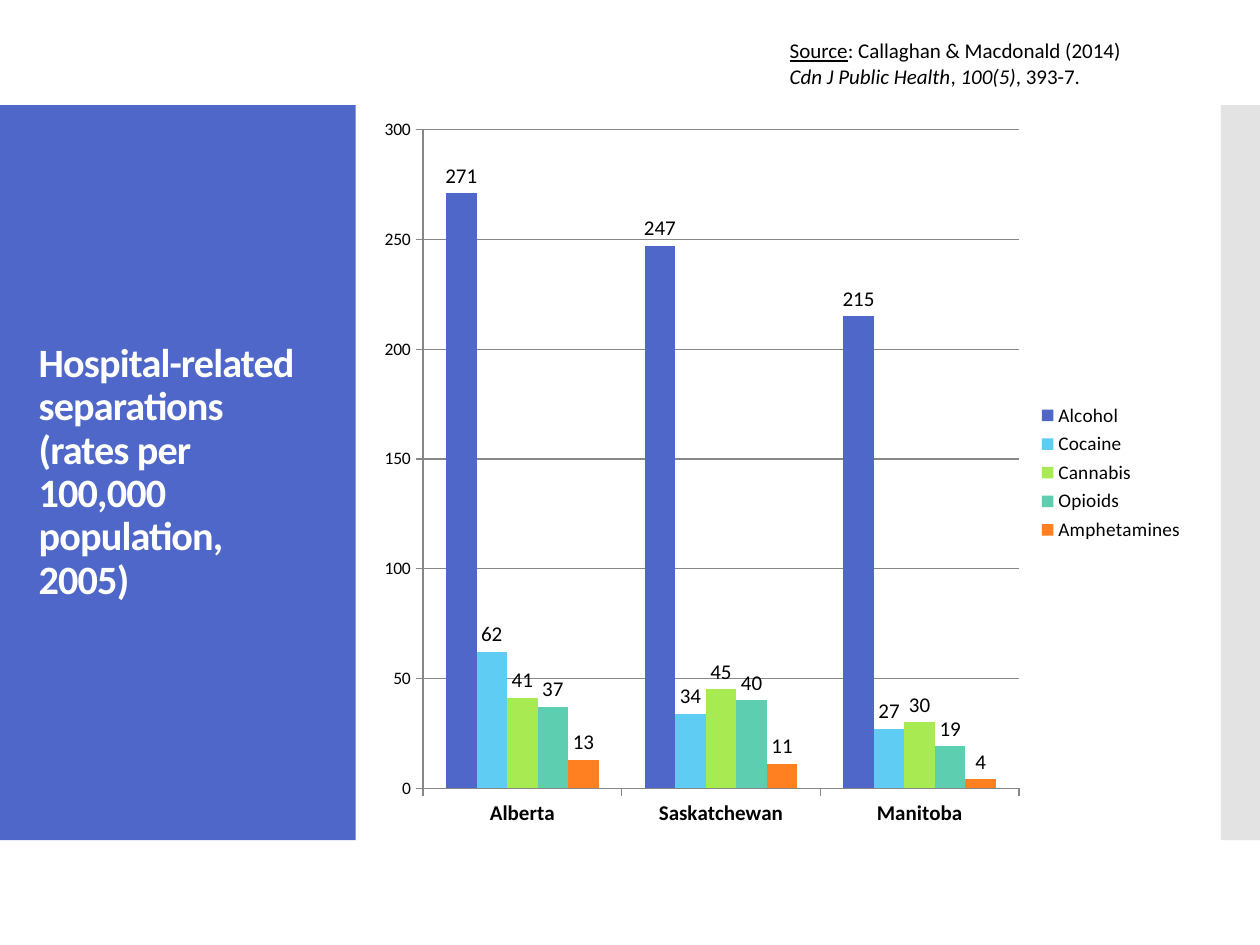
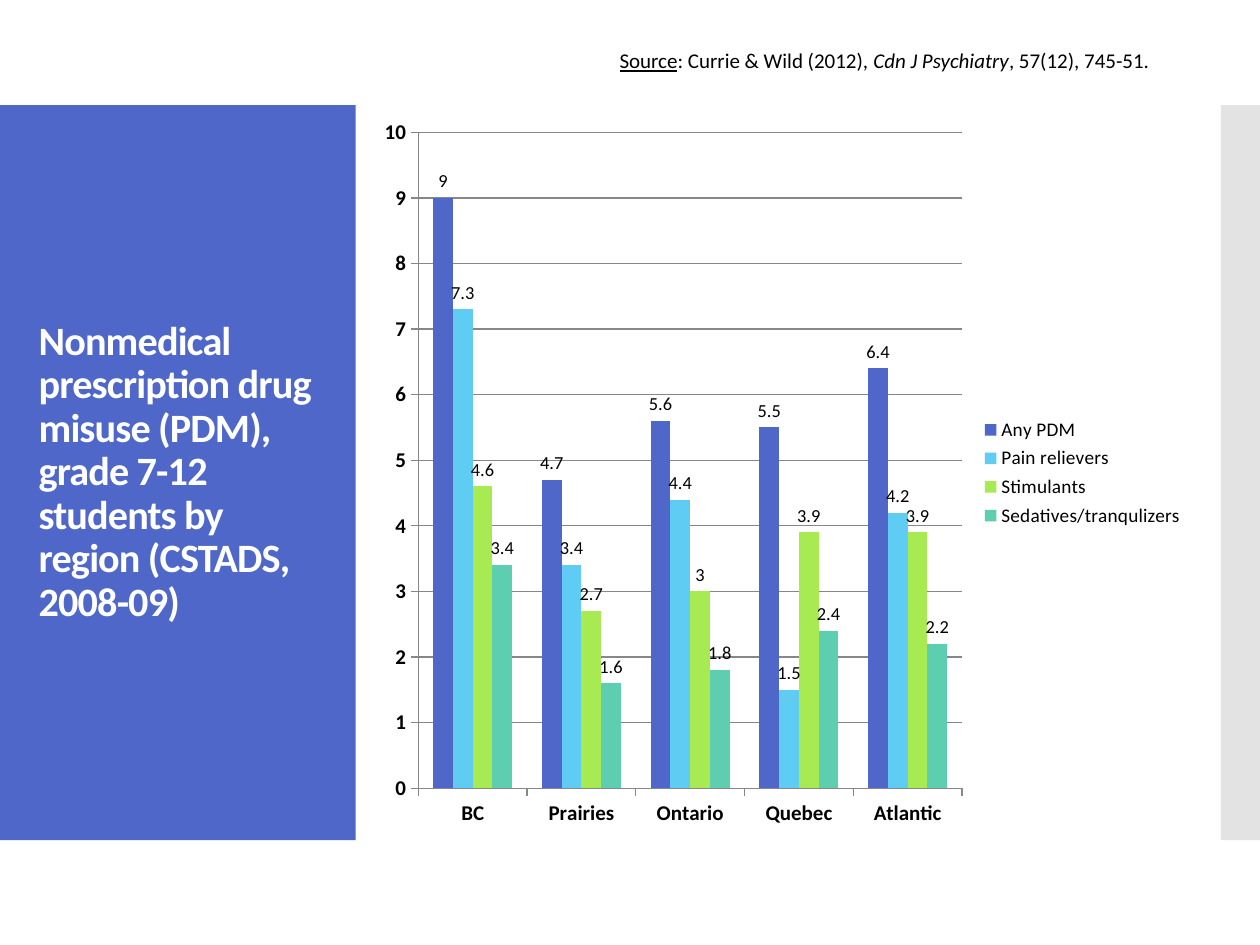
from lxml import etree
from pptx import Presentation
from pptx.chart.data import CategoryChartData
from pptx.dml.color import RGBColor
from pptx.enum.chart import XL_CHART_TYPE, XL_LABEL_POSITION, XL_LEGEND_POSITION, XL_TICK_MARK
from pptx.enum.shapes import MSO_SHAPE
from pptx.enum.text import MSO_ANCHOR
from pptx.oxml.ns import qn
from pptx.util import Cm, Pt

COLUMNS = XL_CHART_TYPE.COLUMN_CLUSTERED
LABEL_ABOVE = XL_LABEL_POSITION.OUTSIDE_END
LEGEND_RIGHT = XL_LEGEND_POSITION.RIGHT
TICK_OUT = XL_TICK_MARK.OUTSIDE
TICK_NONE = XL_TICK_MARK.NONE
RECTANGLE = MSO_SHAPE.RECTANGLE
MIDDLE = MSO_ANCHOR.MIDDLE

BLUE = RGBColor(0x4E, 0x67, 0xC8)
SKY = RGBColor(0x5E, 0xCC, 0xF3)
LIME = RGBColor(0xA7, 0xEA, 0x52)
TEAL = RGBColor(0x5D, 0xCE, 0xAF)
ORANGE = RGBColor(0xFF, 0x80, 0x21)
GREY = RGBColor(0xC8, 0xC8, 0xC8)
LINE_GREY = RGBColor(0x87, 0x87, 0x87)
WHITE = RGBColor(0xFF, 0xFF, 0xFF)
BLACK = RGBColor(0x00, 0x00, 0x00)
SERIES_COLORS = [BLUE, SKY, LIME, TEAL, ORANGE]
FONT = "Calibri"

# Boxes are left, top, width, height in centimetres
BAND_TOP, BAND_HEIGHT = 2.12, 14.82
TITLE_BOX = (0, BAND_TOP, 7.17, BAND_HEIGHT)
CHART_BOX = (7.42, BAND_TOP, 16.71, BAND_HEIGHT)
EDGE_BOX = (24.61, BAND_TOP, 0.79, BAND_HEIGHT)


def set_font(font, size, color=BLACK, bold=False):
    font.name = FONT
    font.size = Pt(size)
    font.bold = bold
    font.color.rgb = color


def add_band(s, box, color, opacity=100):
    band = s.shapes.add_shape(RECTANGLE, *map(Cm, box))
    band.shadow.inherit = False
    band.fill.solid()
    band.fill.fore_color.rgb = color
    band.line.fill.background()
    if opacity < 100:
        rgb = band.fill._xPr.find(".//" + qn("a:srgbClr"))
        etree.SubElement(rgb, qn("a:alpha")).set("val", str(opacity * 1000))


def add_title_panel(s, box, lines):
    left, top, width, height = box
    add_band(s, box, BLUE)
    margin_x, margin_y = 0.53, 1.02
    tb = s.shapes.add_textbox(Cm(left + margin_x), Cm(top + margin_y),
                              Cm(width - margin_x - 0.49), Cm(height - 2 * margin_y))
    tf = tb.text_frame
    tf.word_wrap = True
    tf.vertical_anchor = MIDDLE
    p = tf.paragraphs[0]
    p.line_spacing = 0.9
    for i, line in enumerate(lines):
        if i:
            p.add_line_break()
        r = p.add_run()
        r.text = line
        set_font(r.font, 23, WHITE, bold=True)
        r.font._element.set("spc", "-50")


def add_source(s, box, paragraphs):
    """Each paragraph is a list of (text, style), style being "u", "i" or empty."""
    tf = s.shapes.add_textbox(*map(Cm, box)).text_frame
    tf.word_wrap = False
    for i, runs in enumerate(paragraphs):
        p = tf.add_paragraph() if i else tf.paragraphs[0]
        for text, style in runs:
            r = p.add_run()
            r.text = text
            set_font(r.font, 12)
            r.font.underline = style == "u"
            r.font.italic = style == "i"


def style_axis(axis, size, bold):
    axis.major_tick_mark = TICK_OUT
    axis.minor_tick_mark = TICK_NONE
    axis.format.line.color.rgb = LINE_GREY
    axis.format.line.width = Pt(0.75)
    set_font(axis.tick_labels.font, size, bold=bold)


def add_column_chart(s, box, categories, series, top_value, step,
                     value_size, value_bold, label_size):
    data = CategoryChartData()
    data.categories = categories
    for name, values in series.items():
        data.add_series(name, values)
    chart = s.shapes.add_chart(COLUMNS, *map(Cm, box), data).chart
    chart.has_title = False
    set_font(chart.font, value_size)

    chart.has_legend = True
    chart.legend.position = LEGEND_RIGHT
    chart.legend.include_in_layout = False
    set_font(chart.legend.font, 11)

    style_axis(chart.category_axis, 12, True)
    value_axis = chart.value_axis
    style_axis(value_axis, value_size, value_bold)
    value_axis.minimum_scale = 0
    value_axis.maximum_scale = top_value
    value_axis.major_unit = step
    value_axis.has_major_gridlines = True
    grid = value_axis.major_gridlines.format.line
    grid.color.rgb = LINE_GREY
    grid.width = Pt(0.75)

    plot = chart.plots[0]
    plot.gap_width = 150
    plot.overlap = 0
    plot.vary_by_categories = False
    for ser, color in zip(plot.series, SERIES_COLORS):
        ser.format.fill.solid()
        ser.format.fill.fore_color.rgb = color
        labels = ser.data_labels
        labels.show_value = True
        labels.position = LABEL_ABOVE
        set_font(labels.font, label_size)


def add_chart_slide(prs, title_lines, source_box, source, **chart):
    s = prs.slides.add_slide(prs.slide_layouts[6])
    add_band(s, EDGE_BOX, GREY, opacity=50)
    add_title_panel(s, TITLE_BOX, title_lines)
    add_column_chart(s, CHART_BOX, **chart)
    add_source(s, source_box, source)


def main():
    prs = Presentation()
    prs.slide_width, prs.slide_height = Cm(25.4), Cm(19.05)

    add_chart_slide(
        prs,
        ["Hospital-related separations", "(rates per 100,000 population, 2005)"],
        (15.67, 0.64, 8.13, 1.27),
        [[("Source", "u"), (": Callaghan & Macdonald (2014)", "")],
         [("Cdn J Public Health", "i"), (", ", ""), ("100(5)", "i"), (", 393-7.", "")]],
        categories=["Alberta", "Saskatchewan", "Manitoba"],
        series={
            "Alcohol": (271, 247, 215),
            "Cocaine": (62, 34, 27),
            "Cannabis": (41, 45, 30),
            "Opioids": (37, 40, 19),
            "Amphetamines": (13, 11, 4),
        },
        top_value=300, step=50, value_size=10, value_bold=False, label_size=12)

    add_chart_slide(
        prs,
        ["Nonmedical prescription drug misuse (PDM), grade 7-12 students by region "
         "(CSTADS, 2008-09)"],
        (12.24, 0.84, 12.47, 0.76),
        [[("Source", "u"), (": Currie & Wild (2012), ", ""),
          ("Cdn J Psychiatry", "i"), (", 57(12), 745-51.", "")]],
        categories=["BC", "Prairies", "Ontario", "Quebec", "Atlantic"],
        series={
            "Any PDM": (9, 4.7, 5.6, 5.5, 6.4),
            "Pain relievers": (7.3, 3.4, 4.4, 1.5, 4.2),
            "Stimulants": (4.6, 2.7, 3, 3.9, 3.9),
            "Sedatives/tranqulizers": (3.4, 1.6, 1.8, 2.4, 2.2),
        },
        top_value=10, step=1, value_size=12, value_bold=True, label_size=10.5)

    prs.save("out.pptx")


if __name__ == "__main__":
    main()
